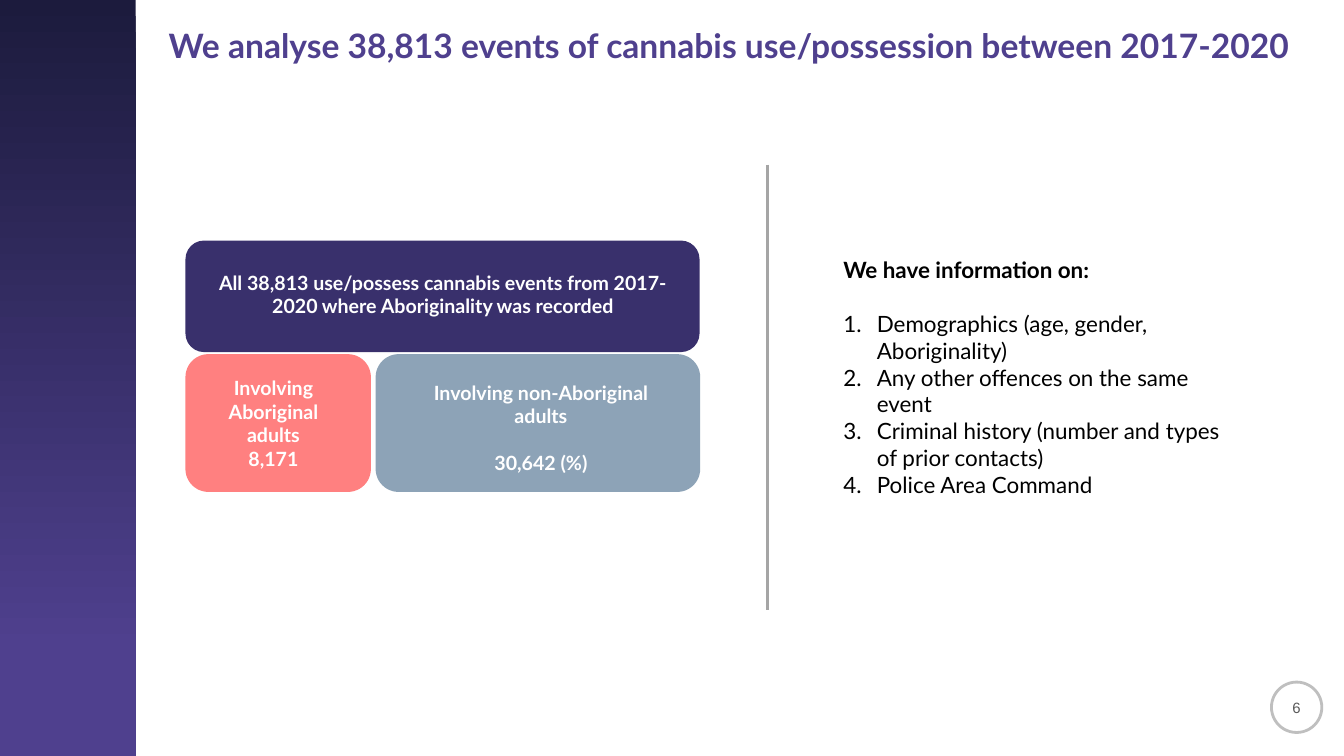
from dataclasses import dataclass

from lxml import etree
from pptx import Presentation
from pptx.dml.color import RGBColor
from pptx.enum.shapes import MSO_CONNECTOR, MSO_SHAPE
from pptx.enum.text import MSO_ANCHOR, MSO_AUTO_SIZE, PP_ALIGN
from pptx.oxml.ns import qn
from pptx.util import Inches, Pt

LEFT, CENTER = PP_ALIGN.LEFT, PP_ALIGN.CENTER
TOP, MIDDLE = MSO_ANCHOR.TOP, MSO_ANCHOR.MIDDLE
RECT, ROUNDED, OVAL = MSO_SHAPE.RECTANGLE, MSO_SHAPE.ROUNDED_RECTANGLE, MSO_SHAPE.OVAL
STRAIGHT = MSO_CONNECTOR.STRAIGHT
NO_FIT = MSO_AUTO_SIZE.NONE


@dataclass(frozen=True)
class Theme:
    font: str = "Lato"
    number_font: str = "Arial"
    night: str = "1C1B3D"
    purple: str = "4F408E"
    indigo: str = "39306C"
    coral: str = "FF8080"
    steel: str = "8DA3B7"
    white: str = "FFFFFF"
    black: str = "000000"
    ring: str = "BFBFBF"
    rule: str = "A5A5A5"
    number: str = "595959"
    title_size: int = 36
    body_size: int = 24
    card_size: int = 21
    number_size: int = 16


THEME = Theme()


def rgb(value):
    return RGBColor.from_string(value)


def add_text(frame, text, *, size, color, font=THEME.font, bold=False, align=LEFT,
             before=0, line_spacing=None, numbered=False):
    """Add one paragraph, using the empty first paragraph when there is one."""
    first = frame.paragraphs[0]
    para = frame.add_paragraph() if first.runs else first
    para.alignment = align
    if before:
        para.space_before = Pt(before)
    if line_spacing:
        para.line_spacing = line_spacing
    if numbered:
        properties = para._p.get_or_add_pPr()
        properties.set("marL", str(Inches(0.5)))
        properties.set("indent", str(-Inches(0.5)))
        bullet = etree.SubElement(properties, qn("a:buAutoNum"))
        bullet.set("type", "arabicPeriod")
    span = para.add_run()
    span.text = text
    span.font.name = font
    span.font.size = Pt(size)
    span.font.bold = bold
    span.font.color.rgb = rgb(color)


def set_frame(frame, anchor, margins=(0.1, 0.05, 0.1, 0.05)):
    frame.word_wrap = True
    frame.auto_size = NO_FIT
    frame.vertical_anchor = anchor
    (frame.margin_left, frame.margin_top,
     frame.margin_right, frame.margin_bottom) = map(Inches, margins)
    return frame


def add_panel(page, kind, area, fill):
    panel = page.shapes.add_shape(kind, *map(Inches, area))
    panel.shadow.inherit = False
    panel.fill.solid()
    panel.fill.fore_color.rgb = rgb(fill)
    panel.line.fill.background()
    return panel


def add_card(page, area, fill, lines, margins, gap=0):
    """Rounded card with centred bold lines, set apart by gap points."""
    card = add_panel(page, ROUNDED, area, fill)
    frame = set_frame(card.text_frame, MIDDLE, margins)
    for index, line in enumerate(lines):
        add_text(frame, line, size=THEME.card_size, color=THEME.white, bold=True,
                 align=CENTER, before=gap if index else 0)


def add_sidebar(page):
    sidebar = add_panel(page, RECT, (0, 0, 2.02, 11.25), THEME.night)
    sidebar.fill.gradient()
    sidebar.fill.gradient_angle = 270
    stops = ((0, THEME.night), (0.86, THEME.purple))
    for stop, (position, color) in zip(sidebar.fill.gradient_stops, stops):
        stop.position = position
        stop.color.rgb = rgb(color)


def add_page_number(page, number):
    badge = add_panel(page, OVAL, (18.92, 10.15, 0.75, 0.75), THEME.white)
    badge.line.color.rgb = rgb(THEME.ring)
    badge.line.width = Pt(3)
    frame = set_frame(badge.text_frame, MIDDLE, (0, 0, 0, 0))
    add_text(frame, number, size=THEME.number_size, color=THEME.number,
             font=THEME.number_font, align=CENTER)


def add_title(page, text):
    title = page.shapes.title
    title.left, title.top, title.width, title.height = map(
        Inches, (2.41, 0.26, 16.96, 1.38))
    add_text(set_frame(title.text_frame, TOP), text, size=THEME.title_size,
             color=THEME.purple, bold=True, line_spacing=1.1)


def add_divider(page, x, top, bottom):
    divider = page.shapes.add_connector(STRAIGHT, *map(Inches, (x, top, x, bottom)))
    divider.line.color.rgb = rgb(THEME.rule)
    divider.line.width = Pt(3)
    etree.SubElement(divider._element.spPr, qn("a:effectLst"))


def add_numbered_list(page, area, heading, items):
    box = page.shapes.add_textbox(*map(Inches, area))
    frame = set_frame(box.text_frame, TOP)
    add_text(frame, heading, size=THEME.body_size, color=THEME.black, bold=True)
    for index, item in enumerate(items):
        add_text(frame, item, size=THEME.body_size, color=THEME.black,
                 before=0 if index else 29, numbered=True)


def main():
    deck = Presentation()
    deck.slide_width, deck.slide_height = Inches(20), Inches(11.25)
    page = deck.slides.add_slide(deck.slide_layouts[5])

    # Frame of the page
    add_sidebar(page)
    add_page_number(page, "6")
    add_title(page, "We analyse 38,813 events of cannabis use/possession between 2017-2020")

    # Events, split by group
    add_card(page, (2.76, 3.58, 7.65, 1.66), THEME.indigo,
             ["All 38,813 use/possess cannabis events from 2017-2020 "
              "where Aboriginality was recorded"], (0.36, 0, 0.35, 0.07))
    add_card(page, (2.76, 5.27, 2.76, 2.05), THEME.coral,
             ["Involving Aboriginal adults", "8,171"], (0.24, 0, 0.38, 0))
    add_card(page, (5.59, 5.27, 4.83, 2.05), THEME.steel,
             ["Involving non-Aboriginal adults", "30,642 (%)"],
             (0.55, 0.13, 0.46, 0), gap=25)

    # Available information
    add_divider(page, 11.42, 2.45, 9.08)
    add_numbered_list(page, (12.45, 3.76, 5.98, 4.14), "We have information on:", [
        "Demographics (age, gender, Aboriginality)",
        "Any other offences on the same event",
        "Criminal history (number and types of prior contacts)",
        "Police Area Command",
    ])

    deck.save("out.pptx")


if __name__ == "__main__":
    main()
